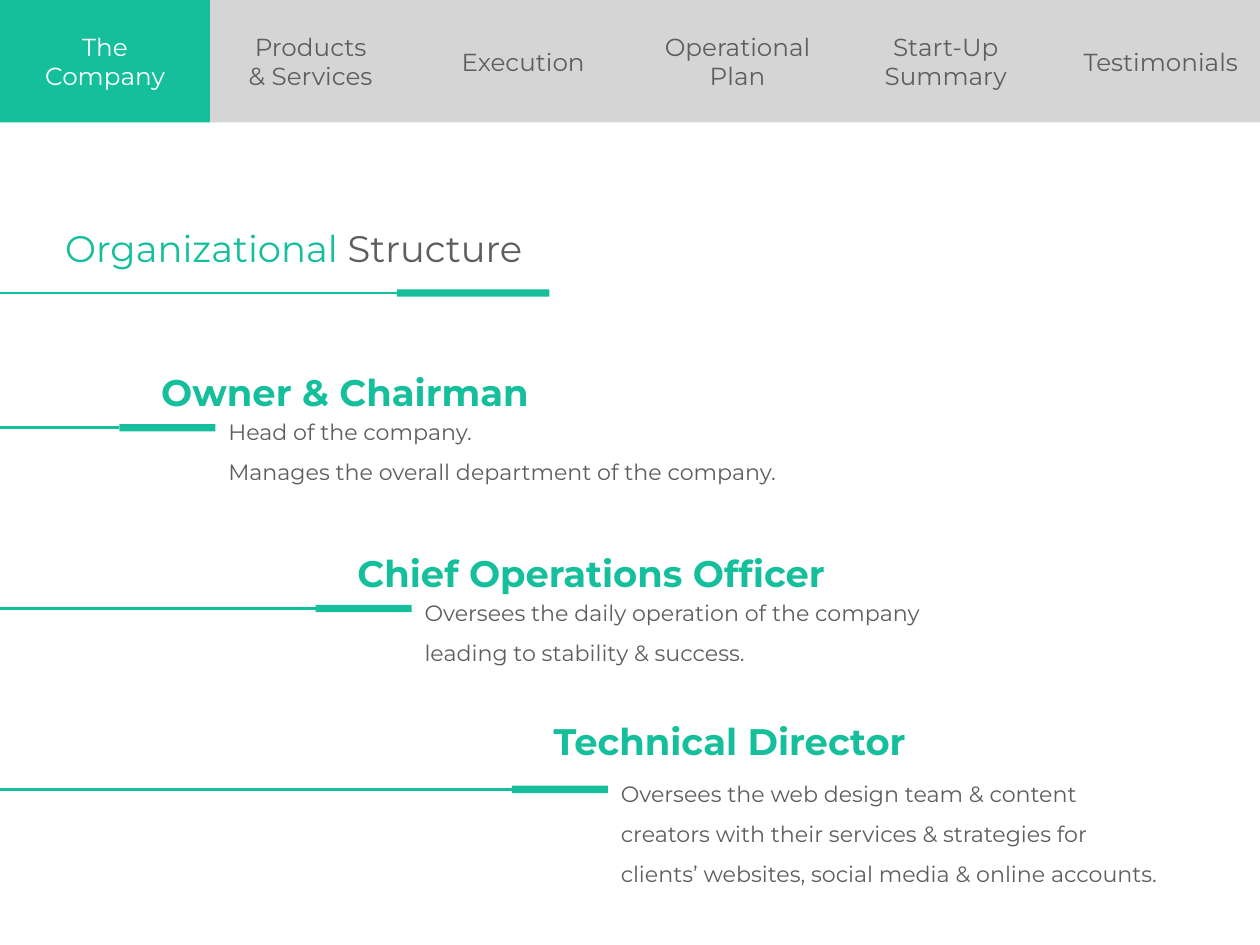
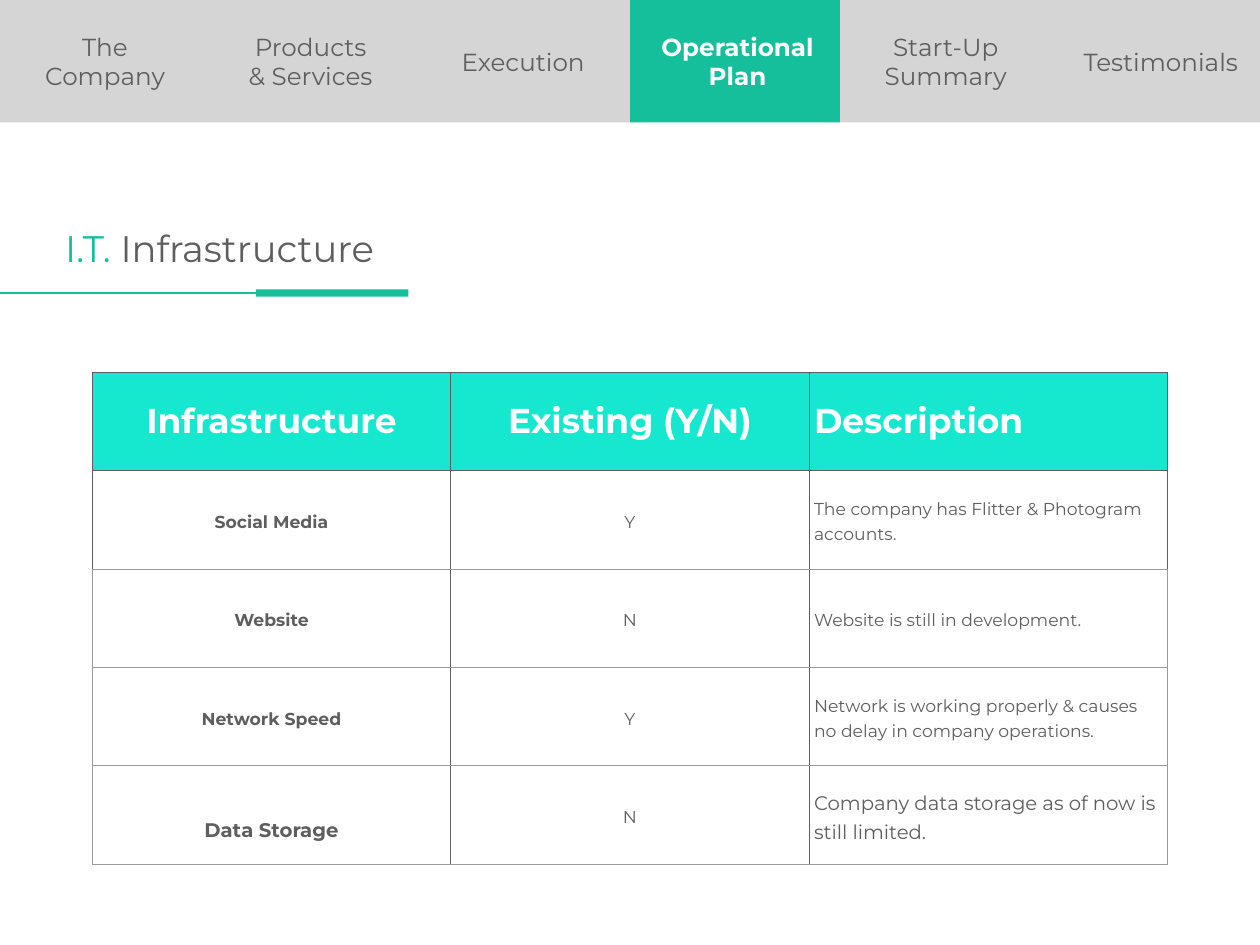
"""Builds the organizational structure and I.T. infrastructure slides."""
from dataclasses import dataclass
from typing import Any

from lxml import etree
from pptx import Presentation
from pptx import util as u
from pptx.dml.color import RGBColor
from pptx.enum import shapes, text
from pptx.oxml import ns

Pt = u.Pt


@dataclass(frozen=True)
class Theme:
    accent: str = "15BF9B"
    header: str = "16E7CF"
    band: str = "D6D5D5"
    ink: str = "5E5E5E"
    pale: str = "9A999B"
    white: str = "FFFFFF"
    font: str = "Montserrat"
    title_size: float = 30
    header_size: float = 28
    tab_size: float = 20
    body_size: float = 18
    cell_size: float = 14
    large_cell_size: float = 16
    inset: float = 4
    rule_width: float = 2
    bar_height: float = 6


@dataclass(frozen=True)
class Box:
    left: float
    top: float
    width: float
    height: float

    def lengths(self) -> list[u.Length]:
        return [Pt(n) for n in (self.left, self.top, self.width, self.height)]


@dataclass(frozen=True)
class Span:
    words: str
    size: float
    color: str
    bold: bool = False


@dataclass(frozen=True)
class Para:
    spans: tuple[Span, ...]
    centered: bool = False
    spacing: float = 1.0


@dataclass(frozen=True)
class Tab:
    lines: tuple[str, ...]
    center: float
    width: float


@dataclass(frozen=True)
class Role:
    heading: str
    duties: tuple[str, ...]
    heading_width: float
    body_width: float
    body_height: float = 63.5
    heading_rise: float = 61


@dataclass(frozen=True)
class Asset:
    name: str
    existing: str
    note: str
    size: float
    name_spacing: float = 1.2


THEME = Theme()
WIDTH, HEIGHT = 1024, 768
TAB_HEIGHT = 99.4
TAB_LINE = 24
TABS = (
    Tab(("The", "Company"), 85.3, 110),
    Tab(("Products", "& Services"), 252.4, 112),
    Tab(("Execution",), 425.2, 110),
    Tab(("Operational", "Plan"), 599.4, 139),
    Tab(("Start-Up", "Summary"), 768.6, 109),
    Tab(("Testimonials",), 943.4, 136),
)
ROLES = (
    Role("Owner & Chairman",
         ("Head of the company.", "Manages the overall department of the company."),
         325, 456),
    Role("Chief Operations Officer",
         ("Oversees the daily operation of the company leading to stability & success.",),
         429, 456),
    Role("Technical Director",
         ("Oversees the web design team & content creators with their services & "
          "strategies for clients’ websites, social media & online accounts.",),
         429, 446, 96, 71.5),
)
HEADERS = ("Infrastructure", "Existing (Y/N)", "Description")
ASSETS = (
    Asset("Social Media", "Y", "The company has Flitter & Photogram accounts.", THEME.cell_size),
    Asset("Website", "N", "Website is still in development.", THEME.cell_size),
    Asset("Network Speed", "Y",
          "Network is working properly & causes no delay in company operations.",
          THEME.cell_size),
    Asset("Data Storage", "N", "Company data storage as of now is still limited.",
          THEME.large_cell_size, 2.31),
)


def rgb(color: str) -> RGBColor:
    return RGBColor.from_string(color)


def set_all(target: Any, formats: dict[str, Any]) -> None:
    for name, value in formats.items():
        setattr(target, name, value)


def write(frame: Any, paras: list[Para]) -> None:
    for index, para in enumerate(paras):
        line = frame.add_paragraph() if index else frame.paragraphs[0]
        align = text.PP_ALIGN.CENTER if para.centered else text.PP_ALIGN.LEFT
        set_all(line, {"alignment": align, "line_spacing": para.spacing})
        for span in para.spans:
            run = line.add_run()
            run.text = span.words
            set_all(run.font, {"name": THEME.font, "size": Pt(span.size), "bold": span.bold})
            run.font.color.rgb = rgb(span.color)


def add_text(page: Any, box: Box, paras: list[Para]) -> None:
    frame = page.shapes.add_textbox(*box.lengths()).text_frame
    sides = ("left", "right", "top", "bottom")
    set_all(frame, {f"margin_{side}": Pt(THEME.inset) for side in sides})
    set_all(frame, {"word_wrap": True, "vertical_anchor": text.MSO_ANCHOR.MIDDLE})
    write(frame, paras)


def add_block(page: Any, box: Box, color: str) -> Any:
    block = page.shapes.add_shape(shapes.MSO_SHAPE.RECTANGLE, *box.lengths())
    block.shadow.inherit = False
    block.fill.solid()
    block.fill.fore_color.rgb = rgb(color)
    block.line.fill.background()
    return block


def add_rule(page: Any, left: float, middle: float, width: float) -> None:
    box = Box(left, middle - THEME.bar_height / 2, width, THEME.bar_height)
    bar = add_block(page, box, THEME.accent)
    rule = page.shapes.add_connector(
        shapes.MSO_CONNECTOR.STRAIGHT, Pt(0), Pt(middle), Pt(left), Pt(middle))
    rule.end_connect(bar, 1)
    rule.line.width = Pt(THEME.rule_width)
    rule.line.color.rgb = rgb(THEME.accent)
    etree.SubElement(rule._element.spPr, ns.qn("a:effectLst"))


def add_tabs(page: Any, active: int, bold: bool) -> None:
    pitch = WIDTH / len(TABS)
    for index in range(len(TABS)):
        color = THEME.accent if index == active else THEME.band
        add_block(page, Box(index * pitch, 0, pitch, TAB_HEIGHT), color)
    for index, tab in enumerate(TABS):
        current = index == active
        color = THEME.white if current else THEME.ink
        height = TAB_LINE * len(tab.lines) + 2 * THEME.inset
        box = Box(tab.center - tab.width / 2, (TAB_HEIGHT - height) / 2, tab.width, height)
        add_text(page, box, [
            Para((Span(line, THEME.tab_size, color, current and bold),), True)
            for line in tab.lines])


def add_page(deck: Any, active: int, bold: bool, lead: str, rest: str,
             title_width: float, bar_left: float) -> Any:
    page = deck.slides.add_slide(deck.slide_layouts[6])
    add_tabs(page, active, bold)
    spans = (Span(lead, THEME.title_size, THEME.accent),
             Span(rest, THEME.title_size, THEME.ink))
    add_text(page, Box(49, 178.5, title_width, 45.5), [Para(spans)])
    add_rule(page, bar_left, 238.2, 124)
    return page


def add_role(page: Any, role: Role, left: float, middle: float) -> None:
    heading = Span(role.heading, THEME.title_size, THEME.accent, True)
    add_text(page, Box(left + 30, middle - role.heading_rise, role.heading_width, 45.5),
             [Para((heading,), spacing=1.5)])
    add_text(page, Box(left + 84.5, middle - 17.8, role.body_width, role.body_height),
             [Para((Span(duty, THEME.body_size, THEME.ink),), spacing=1.5)
              for duty in role.duties])
    add_rule(page, left, middle, 78)


def add_borders(cell: Any, colors: dict[str, str]) -> None:
    properties = cell._tc.get_or_add_tcPr()
    for side, color in colors.items():
        line = etree.SubElement(properties, ns.qn(f"a:ln{side}"), w=str(Pt(1)))
        fill = etree.SubElement(line, ns.qn("a:solidFill"))
        etree.SubElement(fill, ns.qn("a:srgbClr"), val=color)


def border_colors(row: int, column: int) -> dict[str, str]:
    outer = THEME.pale if row > 1 else THEME.ink
    return {
        "L": outer if column == 0 else THEME.ink,
        "R": outer if column == len(HEADERS) - 1 else THEME.ink,
        "T": outer,
        "B": THEME.pale if row > 0 else THEME.ink,
    }


def asset_paras(asset: Asset) -> list[Para]:
    return [
        Para((Span(asset.name, asset.size, THEME.ink, True),), True, asset.name_spacing),
        Para((Span(asset.existing, THEME.cell_size, THEME.ink),), True, 1.2),
        Para((Span(asset.note, asset.size, THEME.ink),), False, 1.2),
    ]


def add_asset_table(page: Any) -> None:
    header = [Para((Span(name, THEME.header_size, THEME.white, True),), column < 2)
              for column, name in enumerate(HEADERS)]
    grid = [header] + [asset_paras(asset) for asset in ASSETS]
    box = Box(75, 302.5, 291.3 * len(HEADERS), 80 * len(grid))
    table = page.shapes.add_table(len(grid), len(HEADERS), *box.lengths()).table
    set_all(table, {"first_row": False, "horz_banding": False})
    for row, paras in enumerate(grid):
        for column, para in enumerate(paras):
            cell = table.cell(row, column)
            sides = ("left", "right", "top", "bottom")
            set_all(cell, {f"margin_{side}": Pt(THEME.inset) for side in sides})
            cell.vertical_anchor = text.MSO_ANCHOR.MIDDLE
            add_borders(cell, border_colors(row, column))
            cell.fill.solid()
            cell.fill.fore_color.rgb = rgb(THEME.white if row else THEME.header)
            write(cell.text_frame, [para])


def main() -> None:
    deck = Presentation()
    set_all(deck, {"slide_width": Pt(WIDTH), "slide_height": Pt(HEIGHT)})
    page = add_page(deck, 0, False, "Organizational", " Structure", 405.5, 322.5)
    for index, role in enumerate(ROLES):
        add_role(page, role, 97 + 159.5 * index, 347.6 + 147 * index)
    page = add_page(deck, 3, True, "I.T.", " Infrastructure", 288, 208)
    add_asset_table(page)
    deck.save("out.pptx")


if __name__ == "__main__":
    main()
